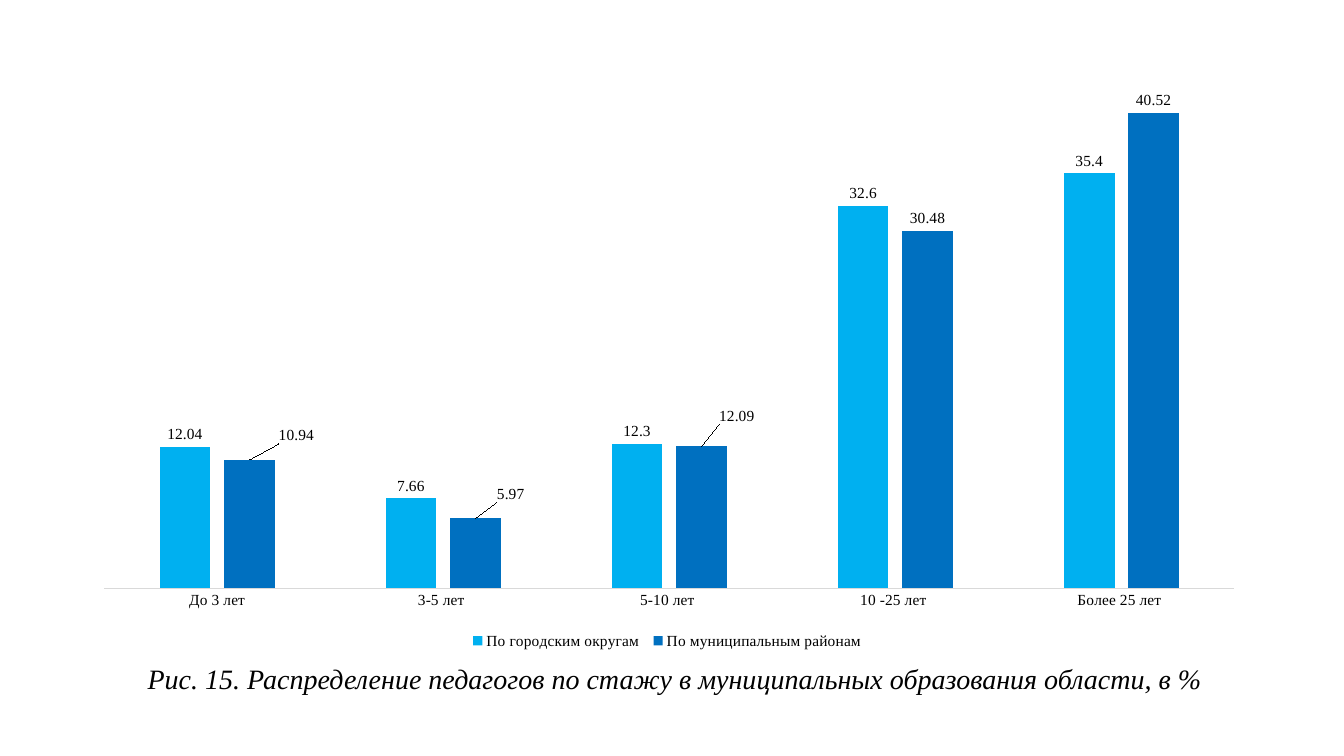
from lxml import etree
from pptx import Presentation
from pptx import util as u
from pptx.chart import data
from pptx.dml import color
from pptx.enum import chart as ch
from pptx.enum import text
from pptx.oxml import ns

COLORS = {"text": "000000", "axis": "D9D9D9", "city": "00B0F0", "district": "0070C0"}
CATEGORIES = ["До 3 лет", "3-5 лет ", "5-10 лет ", "10 -25 лет ", "Более 25 лет "]
SERIES = [
    ("По городским округам ", "city", [12.04, 7.66, 12.3, 32.6, 35.4], []),
    ("По муниципальным районам ", "district", [10.94, 5.97, 12.09, 30.48, 40.52],
     [(0.04, -0.02), (0.03, -0.02), (0.03, -0.03)]),
]
CAPTION = "Рис. 15. Распределение педагогов по стажу в муниципальных образования области, в %"


def rgb(name):
    return color.RGBColor.from_string(COLORS[name])


def format_font(font, size=11, italic=None, name="Times New Roman"):
    font.size = u.Pt(size)
    font.name = name
    font.italic = italic
    font.color.rgb = rgb("text")


def add_run(p, content, **style):
    r = p.add_run()
    r.text = content
    format_font(r.font, **style)


class SlideBuilder:
    def __init__(self, prs):
        self.slide = prs.slides.add_slide(prs.slide_layouts[6])

    def caption(self, content, x, y, w, h):
        sp = self.slide.shapes.add_textbox(u.Pt(x), u.Pt(y), u.Pt(w), u.Pt(h))
        tf = sp.text_frame
        tf.word_wrap = True
        tf.auto_size = text.MSO_AUTO_SIZE.SHAPE_TO_FIT_TEXT
        p = tf.paragraphs[0]
        p.alignment = text.PP_ALIGN.CENTER
        add_run(p, content, size=20, italic=True)

    def move_label(self, series, index, dx, dy):
        label = series.points[index].data_label
        format_font(label.font)
        label.position = ch.XL_LABEL_POSITION.OUTSIDE_END
        idx = series.data_labels._element.xpath(f"c:dLbl/c:idx[@val='{index}']")[0]
        layout = etree.Element(ns.qn("c:layout"))
        manual = etree.SubElement(layout, ns.qn("c:manualLayout"))
        for axis, shift in (("x", dx), ("y", dy)):
            etree.SubElement(manual, ns.qn(f"c:{axis}"), val=str(shift))
        idx.addnext(layout)

    def column_chart(self, categories, rows, x, y, w, h):
        chart_data = data.CategoryChartData()
        chart_data.categories = categories
        for name, _, values, _ in rows:
            chart_data.add_series(name, values)
        chart = self.slide.shapes.add_chart(
            ch.XL_CHART_TYPE.COLUMN_CLUSTERED,
            u.Pt(x), u.Pt(y), u.Pt(w), u.Pt(h), chart_data).chart
        chart.has_title = False
        format_font(chart.font)
        chart.has_legend = True
        chart.legend.position = ch.XL_LEGEND_POSITION.BOTTOM
        chart.legend.include_in_layout = False
        format_font(chart.legend.font)

        axis = chart.category_axis
        axis.major_tick_mark = ch.XL_TICK_MARK.NONE
        axis.format.line.color.rgb = rgb("axis")
        axis.format.line.width = u.Pt(0.75)
        format_font(axis.tick_labels.font)
        scale = chart.value_axis
        scale.has_major_gridlines = False
        scale.minimum_scale, scale.maximum_scale = 0, 45
        scale.visible = False

        plot = chart.plots[0]
        plot.vary_by_categories = False
        plot.gap_width, plot.overlap = 219, -27
        for series, (_, fill, _, shifts) in zip(plot.series, rows):
            series.format.fill.solid()
            series.format.fill.fore_color.rgb = rgb(fill)
            labels = series.data_labels
            labels.show_value = True
            labels.position = ch.XL_LABEL_POSITION.OUTSIDE_END
            format_font(labels.font)
            for index, (dx, dy) in enumerate(shifts):
                self.move_label(series, index, dx, dy)


def main():
    prs = Presentation()
    prs.slide_width, prs.slide_height = u.Pt(960), u.Pt(540)
    builder = SlideBuilder(prs)
    builder.column_chart(CATEGORIES, SERIES, 57.6, 34.6, 841, 432)
    builder.caption(CAPTION, 28, 468.7, 908, 31.7)
    prs.save("out.pptx")


if __name__ == "__main__":
    main()
